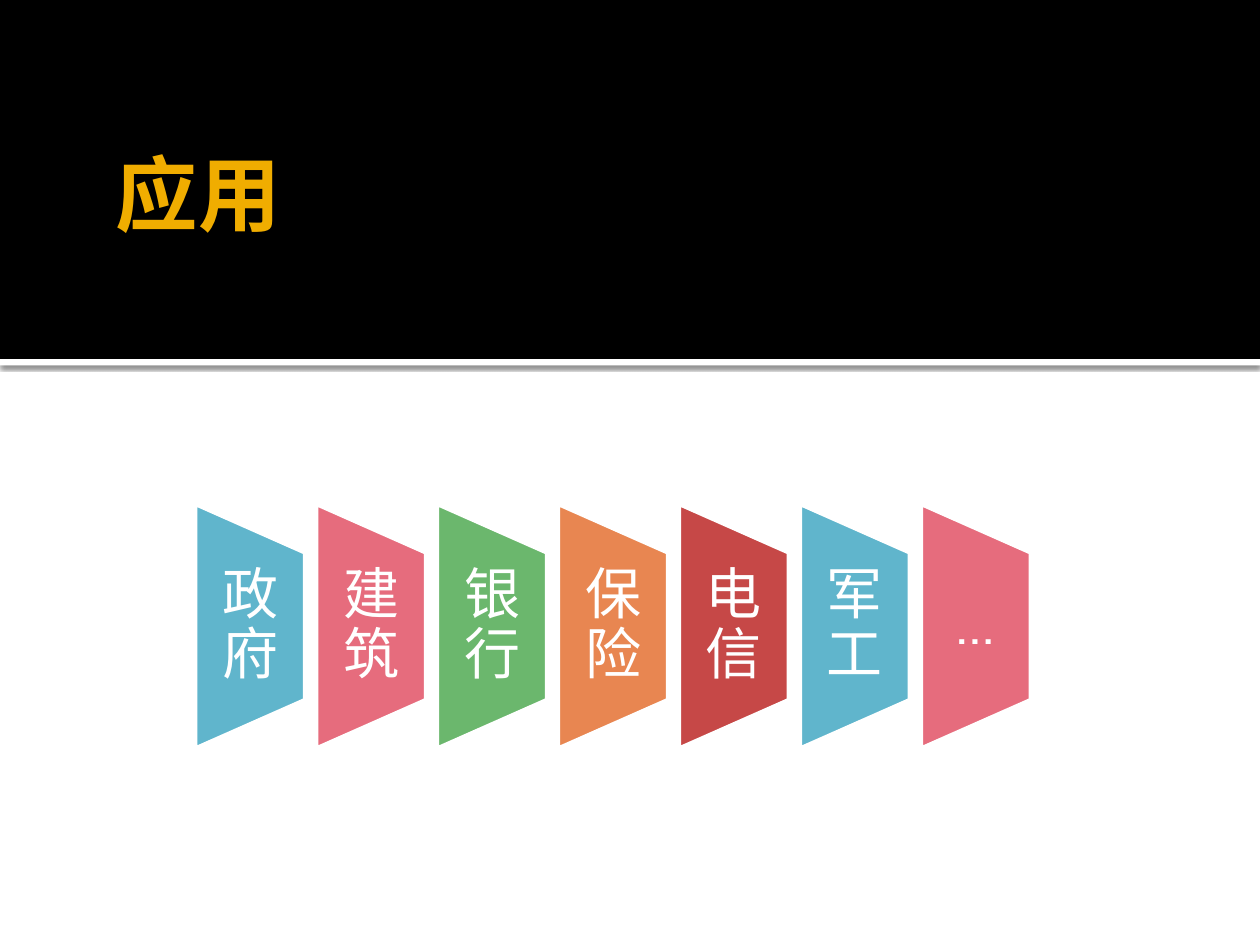
"""Build the applications slide: a title band above a row of sector tabs."""
from lxml import etree
from pptx import Presentation
from pptx.dml.color import RGBColor
from pptx.enum.shapes import MSO_SHAPE
from pptx.enum.text import MSO_ANCHOR, MSO_AUTO_SIZE, PP_ALIGN
from pptx.oxml.ns import qn
from pptx.util import Inches, Pt

RECTANGLE = MSO_SHAPE.RECTANGLE
TAB = MSO_SHAPE.FLOWCHART_MANUAL_OPERATION
MIDDLE, BOTTOM = MSO_ANCHOR.MIDDLE, MSO_ANCHOR.BOTTOM
LEFT, CENTER = PP_ALIGN.LEFT, PP_ALIGN.CENTER
NO_FIT = MSO_AUTO_SIZE.NONE

FONT = "Cabin"
TITLE = "应用"
SECTORS = [
    ("政府", "60B5CC"),
    ("建筑", "E66C7D"),
    ("银行", "6BB76D"),
    ("保险", "E88651"),
    ("电信", "C64847"),
    ("军工", "60B5CC"),
    ("…", "E66C7D"),
]
TAB_LENGTH, TAB_WIDTH, LABEL_HEIGHT = 1.97, 0.89, 1.18
FIRST_LEFT, TAB_STEP, ROW_CENTER = 1.54, 0.96, 4.97


def color(value):
    return RGBColor.from_string(value)


def place(box, left, top, width, height):
    box.left, box.top = Inches(left), Inches(top)
    box.width, box.height = Inches(width), Inches(height)


def add_shape(page, kind, bounds, fill, line_width=0):
    shape = page.shapes.add_shape(kind, *map(Inches, bounds))
    shape.shadow.inherit = False
    shape.fill.solid()
    shape.fill.fore_color.rgb = color(fill)
    if line_width:
        shape.line.color.rgb = color("FFFFFF")
        shape.line.width = Pt(line_width)
    else:
        shape.line.fill.background()
    return shape


def add_shadow(shape):
    effects = shape._element.spPr.find(qn("a:effectLst"))
    shadow = etree.SubElement(
        effects, qn("a:outerShdw"), blurRad=str(Pt(2.5)), dist=str(Pt(0.8)),
        dir="5400000", algn="tl", rotWithShape="0")
    black = etree.SubElement(shadow, qn("a:srgbClr"), val="000000")
    etree.SubElement(black, qn("a:alpha"), val="60000")


def write(box, text, size, fill, anchor, align, inset, bold=False):
    frame = box.text_frame
    frame.word_wrap = True
    frame.auto_size = NO_FIT
    frame.vertical_anchor = anchor
    frame.margin_left = frame.margin_right = Inches(inset)
    frame.margin_top = frame.margin_bottom = 0
    para = frame.paragraphs[0]
    para.alignment = align
    para.line_spacing = 0.9 if align == CENTER else 1
    span = para.add_run()
    span.text = text
    span.font.name = FONT
    span.font.size = Pt(size)
    span.font.bold = bold
    span.font.color.rgb = color(fill)


def add_sector(page, index, name, fill):
    left = FIRST_LEFT + index * TAB_STEP
    middle = left + TAB_WIDTH / 2
    tab = add_shape(
        page, TAB,
        (middle - TAB_LENGTH / 2, ROW_CENTER - TAB_WIDTH / 2, TAB_LENGTH, TAB_WIDTH),
        fill, 3.78)
    tab.rotation = 270
    label = page.shapes.add_textbox(0, 0, 0, 0)
    place(label, left, ROW_CENTER - LABEL_HEIGHT / 2, TAB_WIDTH, LABEL_HEIGHT)
    write(label, name, 32, "FFFFFF", MIDDLE, CENTER, 0.22)


def main():
    deck = Presentation()
    deck.slide_width, deck.slide_height = Inches(10), Inches(7.5)
    page = deck.slides.add_slide(deck.slide_layouts[5])
    title = page.shapes.title
    band = add_shape(page, RECTANGLE, (0, 0, 10, 2.85), "000000")
    rule = add_shape(page, RECTANGLE, (0, 2.85, 10, 0.05), "FFFFFF")
    add_shadow(rule)
    for shape in (band, rule):
        title._element.addprevious(shape._element)
    place(title, 0.82, 0.13, 8.76, 1.79)
    write(title, TITLE, 47, "F0AD00", BOTTOM, LEFT, 0.1, bold=True)
    for index, (name, fill) in enumerate(SECTORS):
        add_sector(page, index, name, fill)
    deck.save("out.pptx")


if __name__ == "__main__":
    main()
